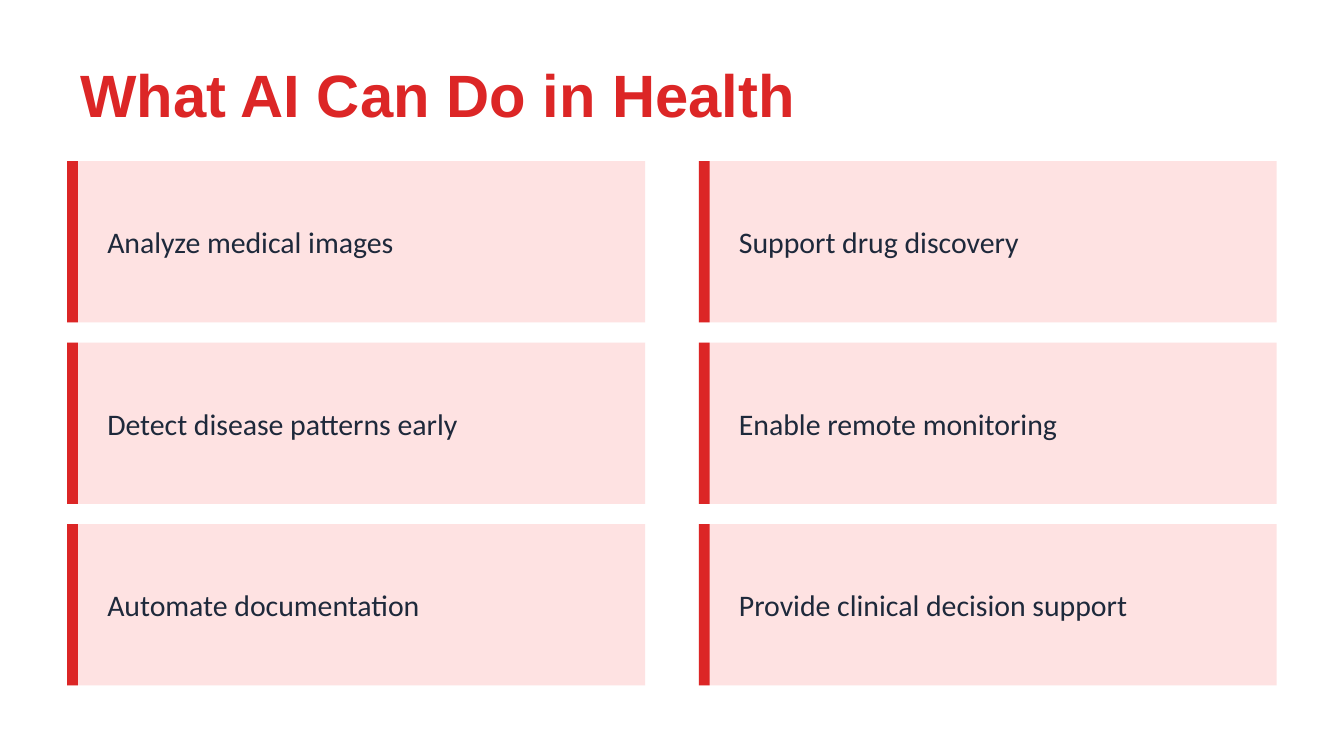
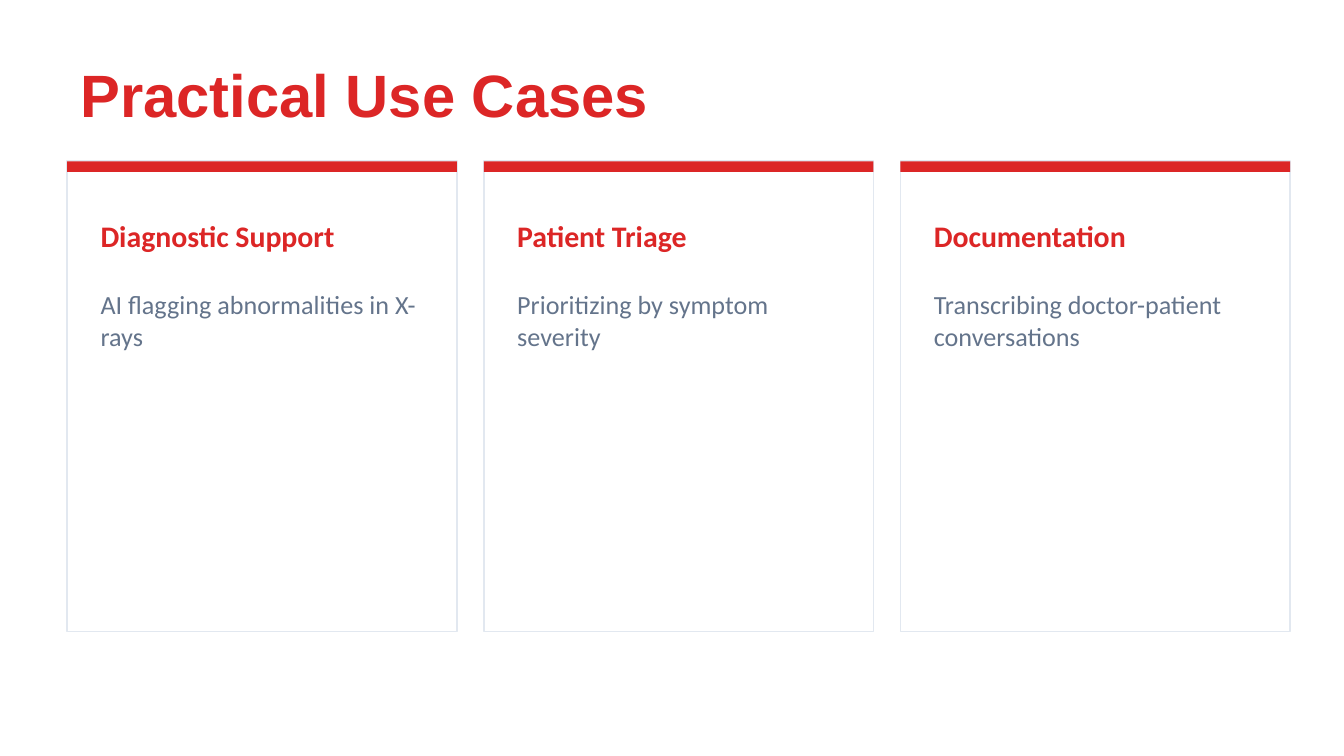
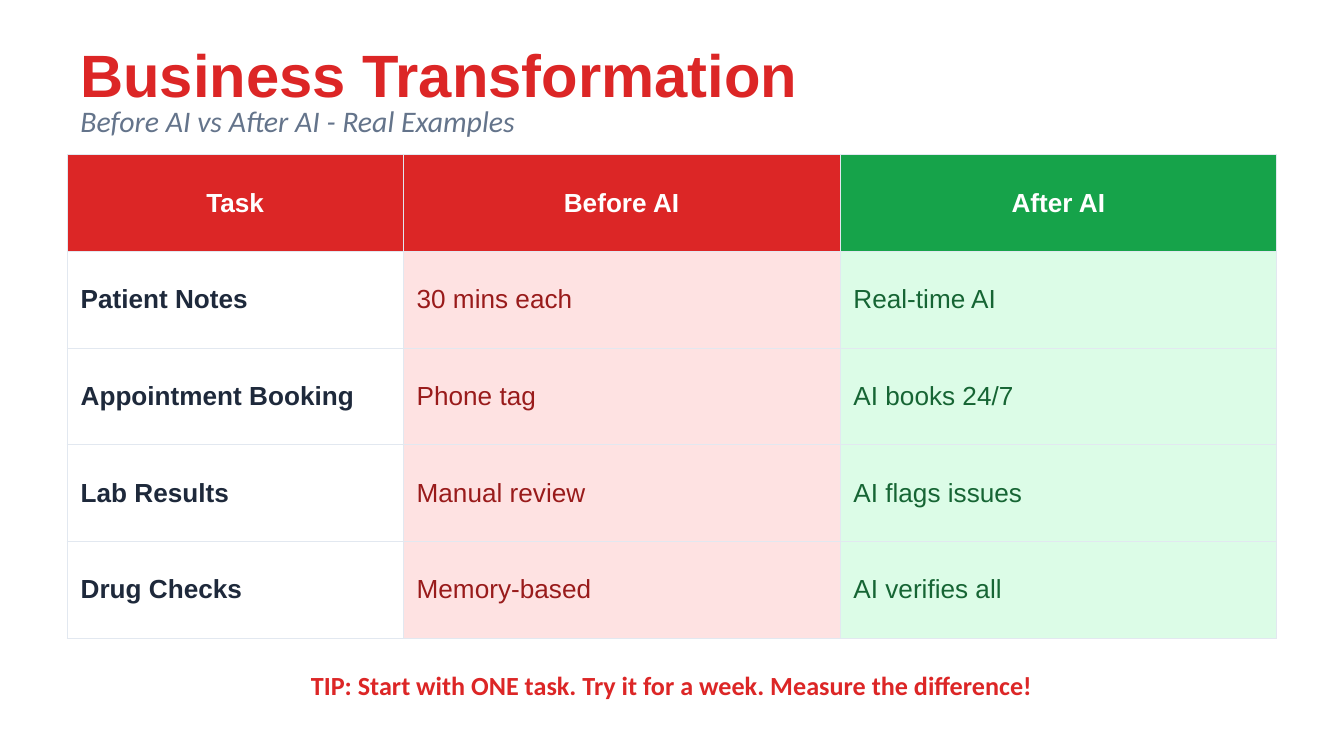
from lxml.etree import SubElement
from pptx import Presentation
from pptx.dml.color import RGBColor
from pptx.enum.shapes import MSO_SHAPE
from pptx.enum.text import MSO_ANCHOR, PP_ALIGN
from pptx.oxml.ns import qn
from pptx.util import Pt

PX = 4572
RED = RGBColor(0xDC, 0x26, 0x26)
ROSE = RGBColor(0xFE, 0xE2, 0xE2)
MAROON = RGBColor(0x99, 0x1B, 0x1B)
GREEN = RGBColor(0x16, 0xA3, 0x4A)
MINT = RGBColor(0xDC, 0xFC, 0xE7)
FOREST = RGBColor(0x16, 0x65, 0x34)
INK = RGBColor(0x1E, 0x29, 0x3B)
SLATE = RGBColor(0x64, 0x74, 0x8B)
MIST = RGBColor(0xE2, 0xE8, 0xF0)
WHITE = RGBColor(0xFF, 0xFF, 0xFF)
HEAD, BODY = "Arial", "Calibri"
LEFT, WIDE, BAR = 100, 1800, 16

SKILLS = [
    ["Analyze medical images", "Detect disease patterns early", "Automate documentation"],
    ["Support drug discovery", "Enable remote monitoring", "Provide clinical decision support"],
]
CASES = [
    ("Diagnostic Support", "AI flagging abnormalities in X-rays"),
    ("Patient Triage", "Prioritizing by symptom severity"),
    ("Documentation", "Transcribing doctor-patient conversations"),
]
TASKS = [
    ("Task", "Before AI", "After AI"),
    ("Patient Notes", "30 mins each", "Real-time AI"),
    ("Appointment Booking", "Phone tag", "AI books 24/7"),
    ("Lab Results", "Manual review", "AI flags issues"),
    ("Drug Checks", "Memory-based", "AI verifies all"),
]
TOPS = [RED, RED, GREEN]
FILLS = [None, ROSE, MINT]
INKS = [INK, MAROON, FOREST]


def emu(box):
    """Turn a box in px into EMU."""
    return [n * PX for n in box]


def write(frame, text, size=14, font=BODY, color=INK, bold=False, slant=False, align=PP_ALIGN.LEFT):
    """Put one formatted paragraph into a text frame."""
    frame.word_wrap = True
    para = frame.paragraphs[0]
    para.alignment = align
    run = para.add_run()
    run.text = text
    run.font.size, run.font.name = Pt(size), font
    run.font.bold, run.font.italic = bold, slant
    run.font.color.rgb = color


def label(slide, box, text, anchor=MSO_ANCHOR.MIDDLE, **style):
    """Add a text box."""
    frame = slide.shapes.add_textbox(*emu(box)).text_frame
    frame.vertical_anchor = anchor
    write(frame, text, **style)


def block(slide, box, fill, edge=None):
    """Add a flat rectangle with an optional outline."""
    shape = slide.shapes.add_shape(MSO_SHAPE.RECTANGLE, *emu(box))
    shape.shadow.inherit = False
    shape.fill.solid()
    shape.fill.fore_color.rgb = fill
    if edge is None:
        shape.line.fill.background()
    else:
        shape.line.color.rgb = edge
        shape.line.width = Pt(1)


def page(deck, title, top=80, high=120):
    """Add a white slide with its red title."""
    slide = deck.slides.add_slide(deck.slide_layouts[6])
    slide.background.fill.solid()
    slide.background.fill.fore_color.rgb = WHITE
    label(slide, (LEFT, top, WIDE, high), title, size=32, font=HEAD, color=RED, bold=True)
    return slide


def skill(slide, box, text):
    """Draw a tinted panel with a bar at its left."""
    x, y, w, h = box
    block(slide, box, ROSE)
    block(slide, (x, y, BAR, h), RED)
    label(slide, (x + 40, y + 30, w - 80, h - 60), text, size=16)


def card(slide, box, head, text):
    """Draw an outlined card with a bar along its top."""
    x, y, w, h = box
    block(slide, box, WHITE, edge=MIST)
    block(slide, (x, y, w, BAR), RED)
    label(slide, (x + 30, y + 60, w - 60, 100), head, size=16, color=RED, bold=True)
    label(slide, (x + 30, y + 180, w - 60, h - 220), text, anchor=MSO_ANCHOR.TOP, color=SLATE)


def border(cell):
    """Give a cell thin lines on all sides."""
    props = cell._tc.get_or_add_tcPr()
    for side in ("a:lnL", "a:lnR", "a:lnT", "a:lnB"):
        line = SubElement(props, qn(side), w=str(Pt(0.5)))
        fill = SubElement(line, qn("a:solidFill"))
        SubElement(fill, qn("a:srgbClr"), val=str(MIST))


def paint(cell, text, fill, **style):
    """Fill one table cell."""
    border(cell)
    if fill is None:
        cell.fill.background()
    else:
        cell.fill.solid()
        cell.fill.fore_color.rgb = fill
    cell.vertical_anchor = MSO_ANCHOR.MIDDLE
    write(cell.text_frame, text, font=HEAD, **style)


def grid(slide, box, rows, widths):
    """Draw the task table."""
    table = slide.shapes.add_table(len(rows), len(widths), *emu(box)).table
    table.first_row = table.horz_banding = False
    for col, width in zip(table.columns, widths):
        col.width = width * PX
    for r, row in enumerate(rows):
        for c, text in enumerate(row):
            cell = table.cell(r, c)
            if r == 0:
                paint(cell, text, TOPS[c], color=WHITE, bold=True, align=PP_ALIGN.CENTER)
            else:
                paint(cell, text, FILLS[c], color=INKS[c], bold=c == 0)


def skills(deck):
    """Build the slide of six panels."""
    slide = page(deck, "What AI Can Do in Health")
    for c, texts in enumerate(SKILLS):
        for r, text in enumerate(texts):
            skill(slide, (LEFT + c * 940, 240 + r * 270, 860, 240), text)


def cases(deck):
    """Build the slide of three cards."""
    slide = page(deck, "Practical Use Cases")
    for c, (head, text) in enumerate(CASES):
        card(slide, (LEFT + c * 620, 240, 580, 700), head, text)


def change(deck):
    """Build the slide that compares before and after."""
    slide = page(deck, "Business Transformation", top=60, high=100)
    label(slide, (LEFT, 150, WIDE, 60), "Before AI vs After AI - Real Examples",
          size=16, color=SLATE, slant=True)
    grid(slide, (LEFT, 230, WIDE, 720), TASKS, (500, 650, 650))
    label(slide, (LEFT, 980, WIDE, 80),
          "TIP: Start with ONE task. Try it for a week. Measure the difference!",
          color=RED, bold=True, align=PP_ALIGN.CENTER)


def main():
    """Build and save the deck."""
    deck = Presentation()
    deck.slide_width, deck.slide_height = emu((2000, 1125))
    skills(deck)
    cases(deck)
    change(deck)
    deck.save("out.pptx")


if __name__ == "__main__":
    main()
